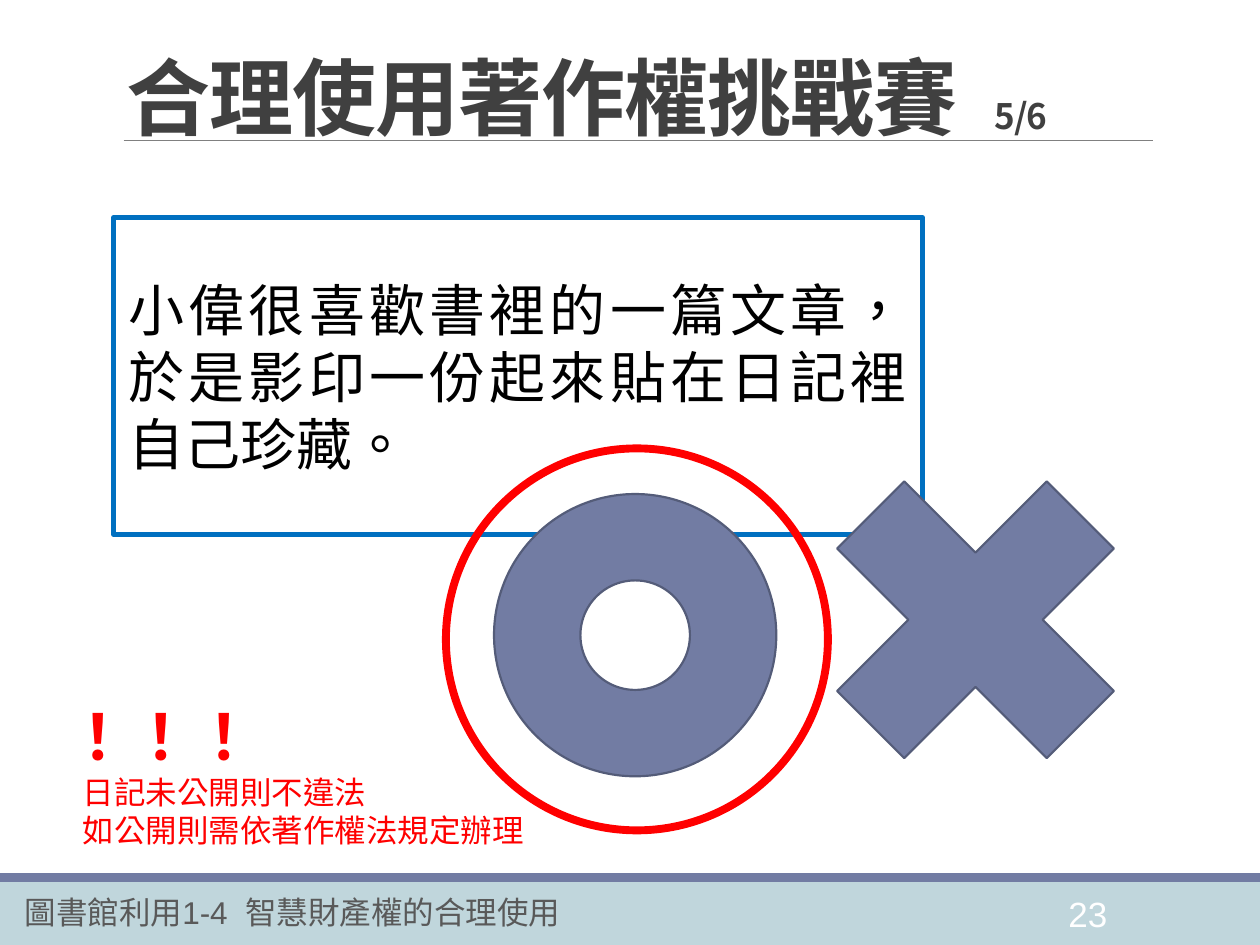
from pptx import Presentation
from pptx.dml.color import RGBColor
from pptx.enum import shapes, text
from pptx.oxml import parse_xml
from pptx.oxml.ns import nsdecls
from pptx.util import Cm, Pt

WHITE = RGBColor(0xFF, 0xFF, 0xFF)
BLACK = RGBColor(0, 0, 0)
RED = RGBColor(0xFF, 0, 0)
BLUE = RGBColor(0x00, 0x70, 0xC0)
SLATE = RGBColor(0x72, 0x7C, 0xA3)
DARK_SLATE = RGBColor(0x54, 0x5C, 0x79)
PALE_BLUE = RGBColor(0xC0, 0xD6, 0xDC)
GREY = RGBColor(0x80, 0x80, 0x80)
FOOTER_GREY = RGBColor(0x59, 0x59, 0x59)
TITLE_GREY = RGBColor(0x40, 0x40, 0x40)
LATIN, CJK = "Arial", "Noto Sans CJK SC"

TITLE = [("合理使用著作權挑戰賽  ", 48), ("5/6", 20)]
QUESTION = "小偉很喜歡書裡的一篇文章，於是影印一份起來貼在日記裡自己珍藏。"
# text, size, bold
ANSWER = [
    ("！！！", 36, True),
    ("日記未公開則不違法", 18, False),
    ("如公開則需依著作權法規定辦理", 18, False),
]
FOOTER = [("圖書館利用1-4  智慧財產權的合理使用", 18, False)]
PAGE_NUMBER = [("23", 20, False)]


def box(*lengths):
    return [Cm(v) for v in lengths]


def add_run(p, words):
    """Add a run set as Traditional Chinese with the East Asian font."""
    r = p.add_run()
    r.text = words
    rPr = r._r.get_or_add_rPr()
    rPr.set("lang", "zh-TW")
    rPr.append(parse_xml(f'<a:ea {nsdecls("a")} typeface="{CJK}"/>'))
    return r


def style(font, size, color, bold=False, name=LATIN):
    font.size, font.bold, font.name = Pt(size), bold, name
    font.color.rgb = color


def add_shape(kind, at, fill=None, line=None, width=1.25):
    sp = s.shapes.add_shape(kind, *box(*at))
    sp.shadow.inherit = False
    if fill is None:
        sp.fill.background()
    else:
        sp.fill.solid()
        sp.fill.fore_color.rgb = fill
    if line is None:
        sp.line.fill.background()
    else:
        sp.line.color.rgb = line
        sp.line.width = Pt(width)
    return sp


def add_text(at, lines, color):
    tf = s.shapes.add_textbox(*box(*at)).text_frame
    tf.word_wrap = True
    for i, (words, size, bold) in enumerate(lines):
        p = tf.add_paragraph() if i else tf.paragraphs[0]
        add_run(p, words)
        style(p.font, size, color, bold)


prs = Presentation()
prs.slide_width, prs.slide_height = Cm(25.4), Cm(19.05)
s = prs.slides.add_slide(prs.slide_layouts[5])
SHAPE = shapes.MSO_SHAPE

# Footer band and title rule
add_shape(SHAPE.RECTANGLE, (0, 17.78, 25.4, 1.27), PALE_BLUE)
add_shape(SHAPE.RECTANGLE, (0, 17.6, 25.4, 0.18), SLATE)
rule = s.shapes.add_connector(shapes.MSO_CONNECTOR.STRAIGHT, *box(2.49, 2.84, 23.24, 2.84))
rule.line.color.rgb = GREY
rule.line.width = Pt(0.5)
rule._element.spPr.append(parse_xml(f'<a:effectLst {nsdecls("a")}/>'))
add_text((21.29, 17.86, 1.78, 1.02), PAGE_NUMBER, WHITE)
add_text((0.25, 17.88, 11.81, 1.02), FOOTER, FOOTER_GREY)

# Title
title = s.shapes.title
title.left, title.top, title.width, title.height = box(2.29, 1.02, 20.96, 2.06)
tf = title.text_frame
tf.auto_size = text.MSO_AUTO_SIZE.NONE
tf.vertical_anchor = text.MSO_ANCHOR.BOTTOM
p = tf.paragraphs[0]
p.alignment = text.PP_ALIGN.LEFT
p.line_spacing = 0.85
for words, size in TITLE:
    r = add_run(p, words)
    r._r.rPr.set("spc", "-50")
    style(r.font, size, TITLE_GREY, True, CJK)

# Question
question = add_shape(SHAPE.RECTANGLE, (2.29, 4.39, 16.31, 6.38), WHITE, BLUE, 3)
tf = question.text_frame
tf.word_wrap = True
tf.vertical_anchor = text.MSO_ANCHOR.MIDDLE
tf.margin_left = tf.margin_top = tf.margin_right = tf.margin_bottom = Cm(0.3)
p = tf.paragraphs[0]
p.alignment = text.PP_ALIGN.JUSTIFY
p.space_after = Pt(6)
add_run(p, QUESTION)
style(p.font, 32, BLACK)

# Yes and no marks, with the right answer ringed
yes = add_shape(SHAPE.DONUT, (9.96, 9.96, 5.69, 5.69), SLATE, DARK_SLATE)
yes.adjustments[0] = 0.306
no = add_shape(SHAPE.MATH_PLUS, (15.6, 8.43, 8.13, 8.13), SLATE, DARK_SLATE)
no.rotation = 45
add_shape(SHAPE.OVAL, (8.99, 9.04, 7.7, 7.7), line=RED, width=4.5)
add_text((1.42, 13.94, 9.83, 3.33), ANSWER, RED)

prs.save("out.pptx")
